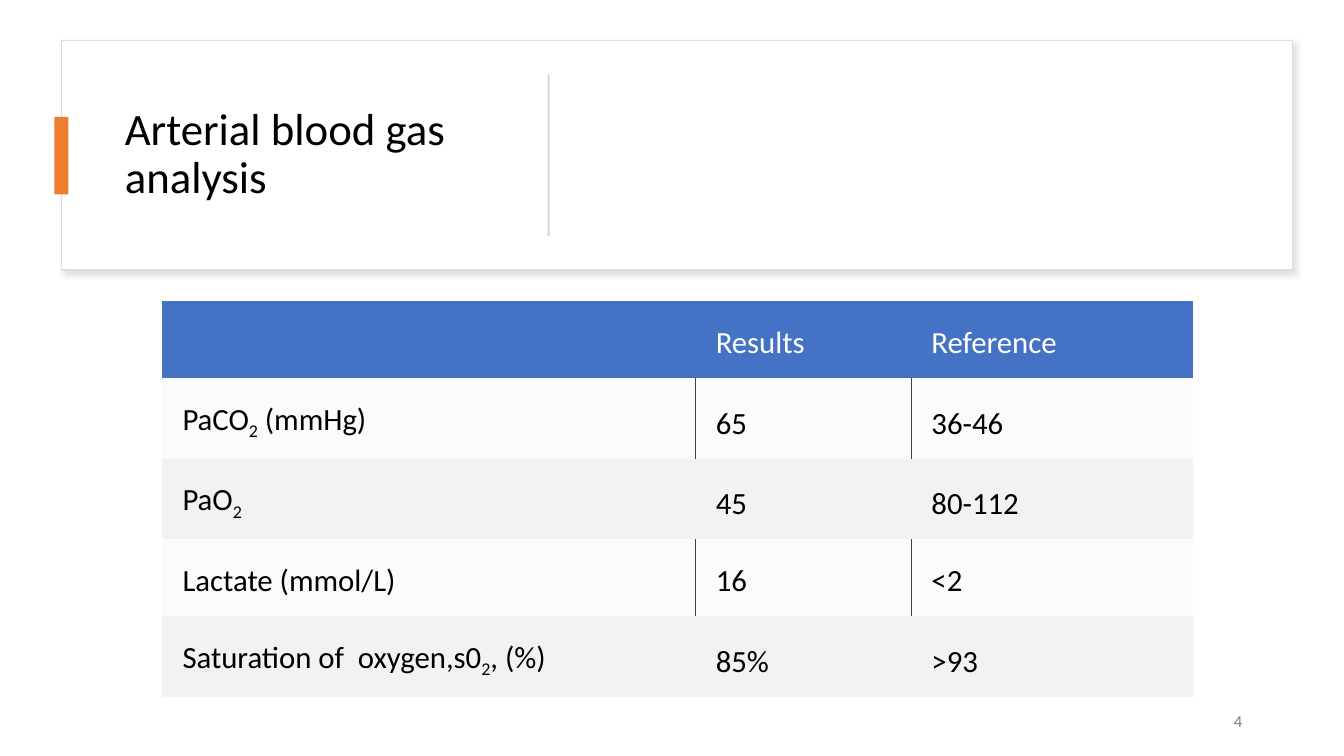
from lxml import etree
from pptx import Presentation
from pptx.dml.color import RGBColor
from pptx.enum.shapes import MSO_SHAPE
from pptx.enum.text import MSO_ANCHOR, PP_ALIGN
from pptx.oxml.ns import qn
from pptx.util import Inches, Pt

RECTANGLE = MSO_SHAPE.RECTANGLE
MIDDLE, BOTTOM = MSO_ANCHOR.MIDDLE, MSO_ANCHOR.BOTTOM
LEFT, RIGHT = PP_ALIGN.LEFT, PP_ALIGN.RIGHT

WHITE = RGBColor(0xFF, 0xFF, 0xFF)
BLACK = RGBColor(0x00, 0x00, 0x00)
GREY = RGBColor(0x80, 0x80, 0x80)
FRAME_GREY = RGBColor(0xDE, 0xDE, 0xDE)
SHADOW_GREY = RGBColor(0xC5, 0xC3, 0xC3)
DIVIDER_GREY = RGBColor(0xD5, 0xD5, 0xD5)
BORDER_GREY = RGBColor(0x40, 0x40, 0x40)
BAND_GREY = RGBColor(0xF2, 0xF2, 0xF2)
ORANGE = RGBColor(0xED, 0x7D, 0x31)
BLUE = RGBColor(0x44, 0x72, 0xC4)

FONT = "Calibri"
SLIDE_W, SLIDE_H = Inches(13.33), Inches(7.5)
PLAIN_TABLE_STYLE = "{2D5ABB26-0587-4C30-8999-92F81FD0307C}"

# Underscores enclose subscripts
BLOOD_GASES = [
    ["", "Results", "Reference"],
    ["PaCO_2_ (mmHg)", "65", "36-46"],
    ["PaO_2_", "45", "80-112"],
    ["Lactate (mmol/L)", "16", "<2"],
    ["Saturation of  oxygen,s0_2_, (%)", "85%", ">93"],
]
COLUMN_SHARES = [39.68, 16.05, 20.93]
ROW_SHARE = 10.16
TIGHT_CELLS = {(1, 2), (2, 2)}


def across(percent):
    return round(SLIDE_W * percent / 100)


def down(percent):
    return round(SLIDE_H * percent / 100)


def box(left, top, width, height):
    return across(left), down(top), across(width), down(height)


def add_block(slide, place, fill, outline=None):
    block = slide.shapes.add_shape(RECTANGLE, *place)
    block.shadow.inherit = False
    block.fill.solid()
    block.fill.fore_color.rgb = fill
    if outline is None:
        block.line.fill.background()
    else:
        block.line.color.rgb = outline
        block.line.width = Pt(1)
    return block


def add_soft_shadow(block):
    effects = block.element.spPr.find(qn("a:effectLst"))
    shadow = etree.SubElement(effects, qn("a:outerShdw"), blurRad=str(Pt(4)),
                              dist=str(Pt(3)), dir=str(45 * 60000))
    color = etree.SubElement(shadow, qn("a:srgbClr"), val=str(SHADOW_GREY))
    etree.SubElement(color, qn("a:alpha"), val="50000")


def write(paragraph, text, size, color):
    for position, part in enumerate(text.split("_")):
        if not part:
            continue
        run = paragraph.add_run()
        run.text = part
        run.font.name = FONT
        run.font.size = Pt(size)
        run.font.color.rgb = color
        if position % 2:
            run.font._element.set("baseline", "-25000")


def add_label(slide, place, text, size, color, align=LEFT):
    frame = slide.shapes.add_textbox(*place).text_frame
    frame.word_wrap = True
    frame.vertical_anchor = MIDDLE
    paragraph = frame.paragraphs[0]
    paragraph.alignment = align
    write(paragraph, text, size, color)
    return paragraph


def add_side_borders(cell, column, last_column):
    sides = ["a:lnL"] * (column > 0) + ["a:lnR"] * (column < last_column)
    properties = cell._tc.get_or_add_tcPr()
    for order, side in enumerate(sides):
        border = etree.Element(qn(side), w=str(Pt(0.5)))
        fill = etree.SubElement(border, qn("a:solidFill"))
        etree.SubElement(fill, qn("a:srgbClr"), val=str(BORDER_GREY))
        properties.insert(order, border)


def fill_cell(cell, color, opacity=None):
    cell.fill.solid()
    cell.fill.fore_color.rgb = color
    if opacity is not None:
        for rgb in cell._tc.tcPr.iter(qn("a:srgbClr")):
            etree.SubElement(rgb, qn("a:alpha"), val=str(opacity * 1000))


def format_cell(cell, text, row, column):
    header, tight = row == 0, (row, column) in TIGHT_CELLS
    cell.margin_left = Inches(0.2)
    cell.margin_right = Inches(0.02 if tight else 0.11)
    cell.margin_top = cell.margin_bottom = Inches(0.16)
    cell.vertical_anchor = MIDDLE if header else BOTTOM
    paragraph = cell.text_frame.paragraphs[0]
    paragraph.line_spacing = 1.0 if tight else 1.15
    write(paragraph, text, 22, WHITE if header else BLACK)
    if header:
        fill_cell(cell, BLUE)
    elif row % 2:
        fill_cell(cell, BAND_GREY, opacity=30)
        add_side_borders(cell, column, len(COLUMN_SHARES) - 1)
    else:
        fill_cell(cell, BAND_GREY)


def add_results_table(slide):
    place = box(12.08, 39.87, sum(COLUMN_SHARES), ROW_SHARE * len(BLOOD_GASES))
    holder = slide.shapes.add_table(len(BLOOD_GASES), len(COLUMN_SHARES), *place)
    for style in holder.element.iter(qn("a:tableStyleId")):
        style.text = PLAIN_TABLE_STYLE
    results = holder.table
    results.horz_banding = False
    results.first_row = False
    for column, share in zip(results.columns, COLUMN_SHARES):
        column.width = across(share)
    for row, values in enumerate(BLOOD_GASES):
        results.rows[row].height = down(ROW_SHARE)
        for column, text in enumerate(values):
            format_cell(results.cell(row, column), text, row, column)


def main():
    deck = Presentation()
    deck.slide_width, deck.slide_height = SLIDE_W, SLIDE_H
    slide = deck.slides.add_slide(deck.slide_layouts[6])

    # Title panel with accent and divider
    panel = add_block(slide, box(4.58, 5.33, 91.6, 30.4), WHITE, FRAME_GREY)
    add_soft_shadow(panel)
    title = add_label(slide, box(8.55, 8.53, 29.18, 24),
                      "Arterial blood gas analysis", 32, BLACK)
    title.line_spacing = 0.9
    add_block(slide, box(4.05, 15.47, 1.05, 10.27), ORANGE)
    divider = add_block(slide, box(34.81, 20.4, 12, 0.27), DIVIDER_GREY)
    divider.rotation = 90

    # Slide number
    number = add_label(slide, box(70.67, 92.67, 22.5, 5.33), "4", 12, GREY, RIGHT)
    number.space_after = Pt(6)

    # Blood gas values
    add_results_table(slide)

    deck.save("out.pptx")


if __name__ == "__main__":
    main()
